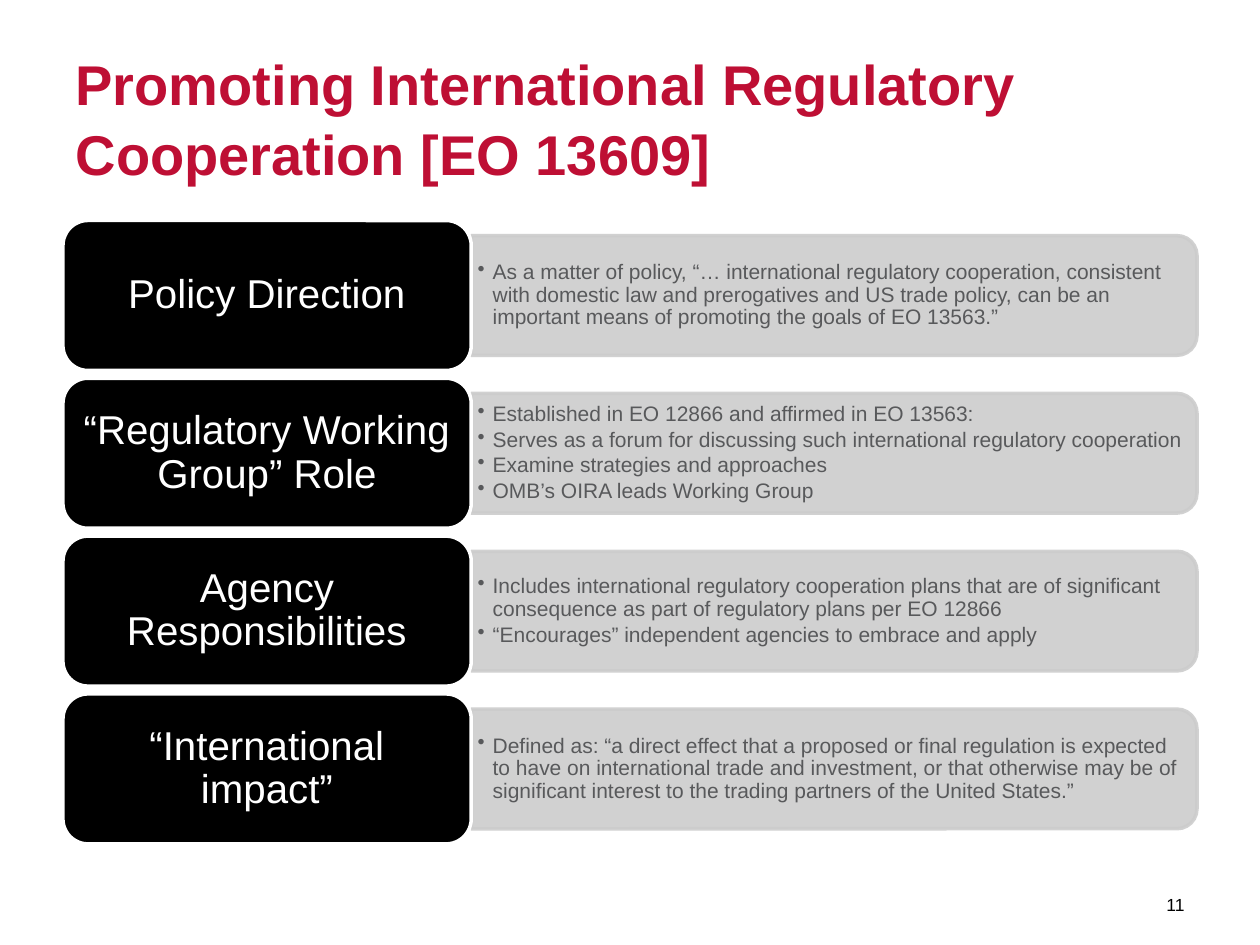
from pptx import Presentation
from pptx.dml.color import RGBColor
from pptx.enum.shapes import MSO_SHAPE as SHAPE
from pptx.enum.text import MSO_ANCHOR as ANCHOR, PP_ALIGN as ALIGN
from pptx.oxml.ns import qn
from pptx.util import Inches, Pt
from lxml import etree

RED = RGBColor(0xBE, 0x0F, 0x34)
BLACK = RGBColor(0, 0, 0)
WHITE = RGBColor(0xFF, 0xFF, 0xFF)
SILVER = RGBColor(0xCC, 0xCC, 0xCC)
SLATE = RGBColor(0x58, 0x59, 0x5B)

UNIT = Inches(0.25)  # the slide is a grid of 40 columns by 30 rows
LEFT, TOP = 2, 7
ROW_STEP = 5.01
LABEL_W, LABEL_H = 12.96, 4.76
BAR_W, BAR_H = 23.04, 3.8
DETAIL_W, DETAIL_H = 22.84, 3.44

TOPICS = [
    ("Policy Direction", [
        "As a matter of policy, “… international regulatory cooperation, consistent with "
        "domestic law and prerogatives and US trade policy, can be an important means of "
        "promoting the goals of EO 13563.”"]),
    ("“Regulatory Working Group” Role", [
        "Established in EO 12866 and affirmed in EO 13563:",
        "Serves as a forum for discussing such international regulatory cooperation",
        "Examine strategies and approaches",
        "OMB’s OIRA leads Working Group"]),
    ("Agency Responsibilities", [
        "Includes international regulatory cooperation plans that are of significant "
        "consequence as part of regulatory plans per EO 12866",
        "“Encourages” independent agencies to embrace and apply"]),
    ("“International impact”", [
        "Defined as: “a direct effect that a proposed or final regulation is expected to "
        "have on international trade and investment, or that otherwise may be of "
        "significant interest to the trading partners of the United States.”"]),
]


def grid(*cells):
    return [round(c * UNIT) for c in cells]


def set_alpha(fill_parent, percent):
    color = fill_parent.find(qn("a:solidFill"))[0]
    etree.SubElement(color, qn("a:alpha")).set("val", str(percent * 1000))


def add_bullet(p):
    pPr = p._p.get_or_add_pPr()
    pPr.set("marL", str(Inches(0.12)))
    pPr.set("indent", str(-Inches(0.12)))
    etree.SubElement(pPr, qn("a:buChar")).set("char", "•")


class Deck:
    font = "Arial"

    def __init__(self):
        self.prs = Presentation()
        self.prs.slide_width, self.prs.slide_height = grid(40, 30)
        self.s = self.prs.slides.add_slide(self.prs.slide_layouts[5])

    def run(self, p, text, size, color, bold=False):
        r = p.add_run()
        r.text = text
        r.font.name, r.font.size, r.font.bold = self.font, Pt(size), bold
        r.font.color.rgb = color

    def frame(self, sp, inset_x=0.1, inset_y=0.05):
        tf = sp.text_frame
        tf.word_wrap = True
        tf.vertical_anchor = ANCHOR.MIDDLE
        tf.margin_left = tf.margin_right = Inches(inset_x)
        tf.margin_top = tf.margin_bottom = Inches(inset_y)
        return tf

    def title(self, text, *cells):
        sp = self.s.shapes.title
        sp.left, sp.top, sp.width, sp.height = grid(*cells)
        p = self.frame(sp).paragraphs[0]
        p.alignment, p.line_spacing = ALIGN.LEFT, 1.04
        self.run(p, text, 32, RED, bold=True)

    def shape(self, kind, cells, fill, line):
        sp = self.s.shapes.add_shape(kind, *grid(*cells))
        sp.shadow.inherit = False
        sp.fill.solid()
        sp.fill.fore_color.rgb = fill
        sp.line.color.rgb = line
        sp.line.width = Pt(2)
        return sp

    def bar(self, x, mid):
        """Draw a bar rounded on its right end: a top-rounded shape turned by 90 degrees."""
        cells = (x + (BAR_W - BAR_H) / 2, mid - BAR_W / 2, BAR_H, BAR_W)
        sp = self.shape(SHAPE.ROUND_2_SAME_RECTANGLE, cells, SILVER, SILVER)
        sp.rotation = 90
        spPr = sp._element.spPr
        for parent in (spPr, spPr.find(qn("a:ln"))):
            set_alpha(parent, 90)

    def details(self, items, x, mid):
        cells = (x, mid - DETAIL_H / 2, DETAIL_W, DETAIL_H)
        tf = self.frame(self.s.shapes.add_textbox(*grid(*cells)), 0.05, 0.03)
        for i, item in enumerate(items):
            p = tf.add_paragraph() if i else tf.paragraphs[0]
            add_bullet(p)
            p.level, p.line_spacing, p.space_after = 1, 0.9, Pt(1.8)
            self.run(p, item, 12, SLATE)

    def label(self, text, x, mid):
        cells = (x, mid - LABEL_H / 2, LABEL_W, LABEL_H)
        sp = self.shape(SHAPE.ROUNDED_RECTANGLE, cells, BLACK, WHITE)
        p = self.frame(sp).paragraphs[0]
        p.alignment, p.line_spacing = ALIGN.CENTER, 0.9
        self.run(p, text, 23, WHITE)

    def page_number(self, text, *cells):
        p = self.frame(self.s.shapes.add_textbox(*grid(*cells))).paragraphs[0]
        p.alignment = ALIGN.RIGHT
        self.run(p, text, 10, BLACK)


def main():
    deck = Deck()
    deck.title("Promoting International Regulatory Cooperation [EO 13609]", LEFT, 1.2, 36, 5)
    for i, (name, items) in enumerate(TOPICS):
        mid = TOP + LABEL_H / 2 + i * ROW_STEP
        deck.bar(LEFT + LABEL_W, mid)
        deck.details(items, LEFT + LABEL_W, mid)
        deck.label(name, LEFT, mid)
    deck.page_number("11", 35.2, 27.92, 2.8, 1.6)
    deck.prs.save("out.pptx")


if __name__ == "__main__":
    main()
